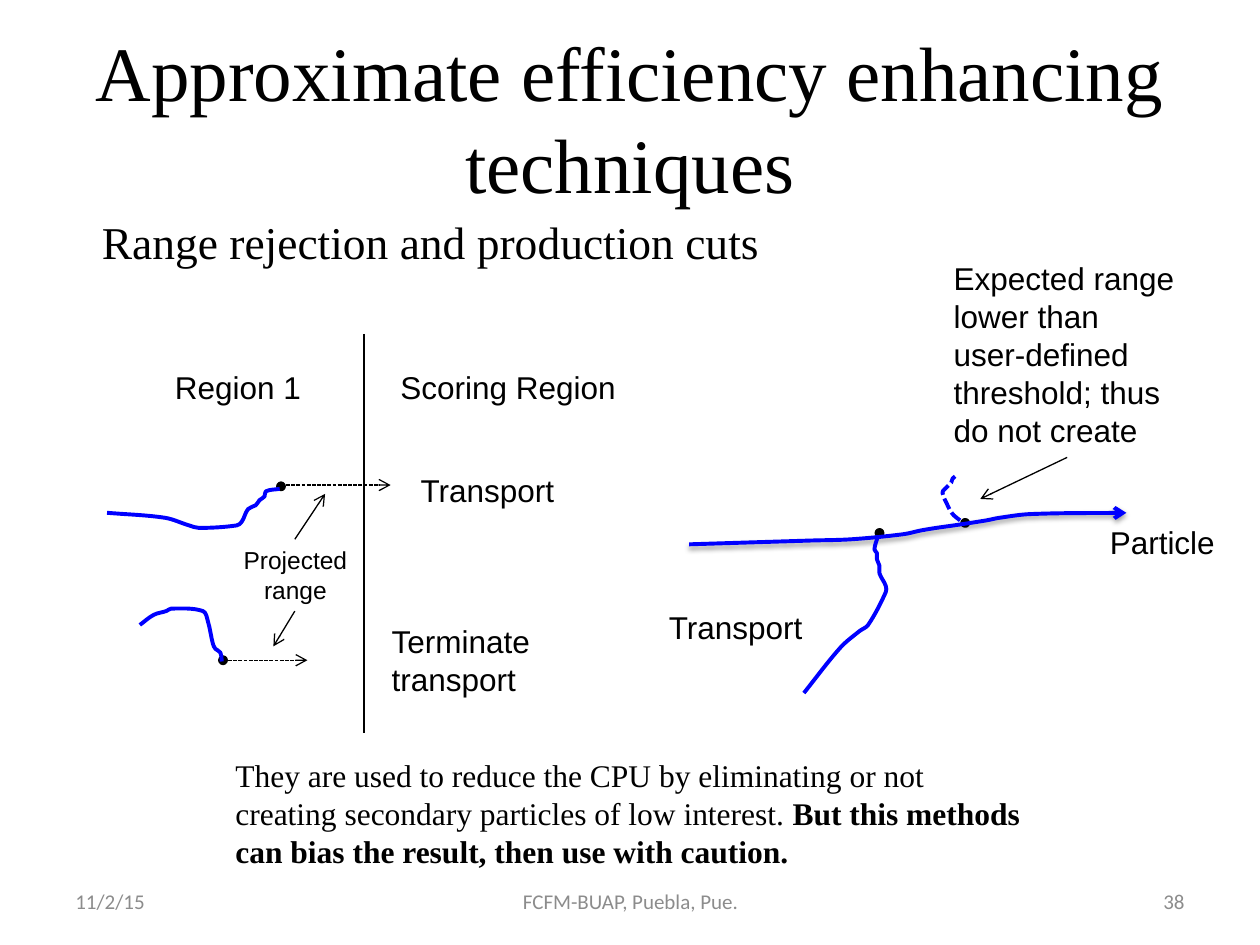
from lxml import etree
from pptx import Presentation
from pptx.dml.color import RGBColor
from pptx.enum.dml import MSO_LINE_DASH_STYLE as Dash
from pptx.enum.shapes import MSO_CONNECTOR, MSO_SHAPE
from pptx.enum.text import MSO_ANCHOR as Anchor, MSO_AUTO_SIZE as AutoSize, PP_ALIGN as Align
from pptx.oxml import parse_xml
from pptx.oxml.ns import nsdecls, qn
from pptx.util import Inches, Pt

COLORS = {"ink": "000000", "track": "0000FF", "footer": "8C8C8C"}
SERIF, SANS, FOOTER_FONT = "Times New Roman", "Arial", "Calibri"


def color(name):
    return RGBColor.from_string(COLORS[name])


def fill_text(frame, text, size=18, font=SANS, ink="ink", align=Align.LEFT,
              anchor=Anchor.TOP, wrap=False, grow=True, bold_tail=""):
    """Write one paragraph per line of text; bold_tail ends the last one."""
    frame.word_wrap = wrap
    frame.auto_size = AutoSize.SHAPE_TO_FIT_TEXT if grow else AutoSize.NONE
    frame.vertical_anchor = anchor
    for index, line in enumerate(text.split("\n")):
        paragraph = frame.paragraphs[0] if index == 0 else frame.add_paragraph()
        paragraph.alignment = align
        paragraph.font.size = Pt(size)
        paragraph.font.name = font
        paragraph.font.color.rgb = color(ink)
        paragraph.add_run().text = line
    if bold_tail:
        tail = paragraph.add_run()
        tail.text = bold_tail
        tail.font.bold = True


def add_text(slide, left, top, width, height, text, **style):
    box = slide.shapes.add_textbox(Inches(left), Inches(top), Inches(width), Inches(height))
    fill_text(box.text_frame, text, **style)


def style_line(shape, ink, width, dashed=False, arrow=False):
    shape.line.color.rgb = color(ink)
    shape.line.width = Pt(width)
    if dashed:
        shape.line.dash_style = Dash.SQUARE_DOT
    if arrow:
        shape.line._get_or_add_ln().append(
            parse_xml(f'<a:tailEnd {nsdecls("a")} type="arrow"/>'))


def add_line(slide, x1, y1, x2, y2, **style):
    line = slide.shapes.add_connector(
        MSO_CONNECTOR.STRAIGHT, Inches(x1), Inches(y1), Inches(x2), Inches(y2))
    style_line(line, "ink", 0.75, **style)
    line._element.spPr.append(parse_xml(f'<a:effectLst {nsdecls("a")}/>'))


def add_dot(slide, x, y, size=0.05):
    dot = slide.shapes.add_shape(
        MSO_SHAPE.OVAL, Inches(x - size / 2), Inches(y - size / 2), Inches(size), Inches(size))
    dot.shadow.inherit = False
    dot.fill.solid()
    dot.fill.fore_color.rgb = color("ink")
    style_line(dot, "ink", 2)


def smooth(track):
    """Turn the straight spans of a freeform into Bézier curves through the same points."""
    spans = list(track._element.iter(qn("a:lnTo")))
    nodes = [*track._element.iter(qn("a:moveTo")), *spans]
    knots = [complex(int(node[0].get("x")), int(node[0].get("y"))) for node in nodes]
    chords = [b - a for a, b in zip([knots[0]] + knots, knots + [knots[-1]])]
    tangents = [(a + b) / abs(a + b) for a, b in zip(chords, chords[1:])]
    for i, span in enumerate(spans):
        start, end = knots[i], knots[i + 1]
        reach = abs(end - start) / 3
        span.tag = qn("a:cubicBezTo")
        controls = (start + tangents[i] * reach, end - tangents[i + 1] * reach)
        for index, control in enumerate(controls):
            point = etree.Element(qn("a:pt"), x=str(round(control.real)),
                                  y=str(round(control.imag)))
            span.insert(index, point)


def add_track(slide, left, top, points, shadow=False, **style):
    knots = [(Inches(left + x), Inches(top + y)) for x, y in points]
    builder = slide.shapes.build_freeform(*knots[0])
    builder.add_line_segments(knots[1:], close=False)
    track = builder.convert_to_shape()
    smooth(track)
    track.fill.background()
    track.shadow.inherit = False
    style_line(track, "track", 2.25, **style)
    if shadow:
        track._element.spPr.find(qn("a:effectLst")).append(parse_xml(
            f'<a:outerShdw {nsdecls("a")} blurRad="39370" dist="20320" dir="5400000" '
            'rotWithShape="0"><a:srgbClr val="000000"><a:alpha val="38000"/></a:srgbClr>'
            '</a:outerShdw>'))


def add_range_rejection(slide, left, top):
    add_line(slide, left + 2.04, top, left + 2.04, top + 3.17)
    for x, y, width, height, label in [
            (0.44, 0.22, 1.21, 0.4, "Region 1"),
            (2.23, 0.22, 1.93, 0.4, "Scoring Region"),
            (2.39, 1.04, 1.27, 0.4, "Transport"),
            (2.16, 2.24, 1.31, 0.71, "Terminate\ntransport")]:
        add_text(slide, left + x, top + y, width, height, label)
    add_text(slide, left + 0.98, top + 1.63, 1.03, 0.57, "Projected\nrange",
             size=14, align=Align.CENTER)
    for x1, y1, x2, y2, dashed in [
            (1.38, 1.2, 2.25, 1.2, True), (0.92, 2.59, 1.59, 2.59, True),
            (1.49, 1.63, 1.73, 1.27, False), (1.49, 2.2, 1.32, 2.48, False)]:
        add_line(slide, left + x1, top + y1, left + x2, top + y2, dashed=dashed, arrow=True)
    for x, y in [(1.38, 1.21), (0.92, 2.59)]:
        add_dot(slide, left + x, top + y)
    transported = [(0, 1.42), (0.46, 1.46), (0.65, 1.52), (0.73, 1.54), (1.03, 1.52),
                   (1.07, 1.49), (1.12, 1.39), (1.18, 1.36), (1.21, 1.32), (1.25, 1.29),
                   (1.26, 1.25), (1.37, 1.23)]
    terminated = [(0.26, 2.31), (0.37, 2.23), (0.47, 2.2), (0.51, 2.18), (0.76, 2.2),
                  (0.8, 2.28), (0.84, 2.46), (0.86, 2.5), (0.9, 2.53), (0.91, 2.6)]
    for points in (transported, terminated):
        add_track(slide, left, top, points)


def add_production_cuts(slide, left, top):
    for x, y in [(1.77, 2.22), (2.45, 2.14)]:
        add_dot(slide, left + x, top + y)
    add_text(slide, left + 3.5, top + 2.09, 1.04, 0.4, "Particle")
    add_text(slide, left + 2.26, top, 1.96, 1.62,
             "Expected range lower than user-defined threshold; thus do not create", wrap=True)
    add_text(slide, left, top + 2.77, 1.27, 0.4, "Transport")
    primary = [(0.26, 2.31), (1.23, 2.28), (1.55, 2.27), (1.96, 2.23), (2.1, 2.2),
               (2.22, 2.18), (2.36, 2.16), (2.62, 2.12), (2.72, 2.1), (2.97, 2.07),
               (3.73, 2.06)]
    secondary = [(1.17, 3.49), (1.46, 3.13), (1.61, 3), (1.68, 2.95), (1.82, 2.69),
                 (1.82, 2.64), (1.77, 2.54), (1.77, 2.48), (1.75, 2.43), (1.75, 2.38),
                 (1.73, 2.35), (1.76, 2.24)]
    not_created = [(2.41, 2.12), (2.36, 2.08), (2.33, 2.04), (2.32, 2.02), (2.27, 1.9),
                   (2.29, 1.87), (2.34, 1.82), (2.35, 1.79), (2.37, 1.77)]
    add_track(slide, left, top, primary, arrow=True, shadow=True)
    add_track(slide, left, top, secondary)
    add_track(slide, left, top, not_created, dashed=True)
    add_line(slide, left + 3.26, top + 1.62, left + 2.57, top + 1.95, arrow=True)


def add_title(slide, left, top, width, height):
    title = slide.shapes.title
    title.left, title.top = Inches(left), Inches(top)
    title.width, title.height = Inches(width), Inches(height)
    fill_text(title.text_frame, "Approximate efficiency enhancing techniques", size=44,
              font=SERIF, align=Align.CENTER, anchor=Anchor.MIDDLE, wrap=True, grow=False)


def add_footer(slide, left, top):
    for x, width, text, align in [
            (0, 2.33, "11/2/15", Align.LEFT),
            (2.92, 3.17, "FCFM-BUAP, Puebla, Pue.", Align.CENTER),
            (6.67, 2.33, "38", Align.RIGHT)]:
        add_text(slide, left + x, top, width, 0.4, text, size=12, font=FOOTER_FONT,
                 ink="footer", align=align, anchor=Anchor.MIDDLE, wrap=True, grow=False)


def main():
    deck = Presentation()
    deck.slide_width, deck.slide_height = Inches(10), Inches(7.5)
    slide = deck.slides.add_slide(deck.slide_layouts[5])
    add_title(slide, 0.5, 0.3, 9, 1.25)
    add_footer(slide, 0.5, 6.95)
    add_range_rejection(slide, 0.85, 2.65)
    add_production_cuts(slide, 5.21, 2.01)
    add_text(slide, 1.77, 5.95, 6.53, 1.01,
             "They are used to reduce the CPU by eliminating or not creating secondary "
             "particles of low interest. ", font=SERIF, wrap=True,
             bold_tail="But this methods can bias the result, then use with caution.")
    add_text(slide, 0.71, 1.65, 9.29, 0.54, "Range rejection and production cuts",
             size=26, font=SERIF, wrap=True)
    deck.save("out.pptx")


if __name__ == "__main__":
    main()
